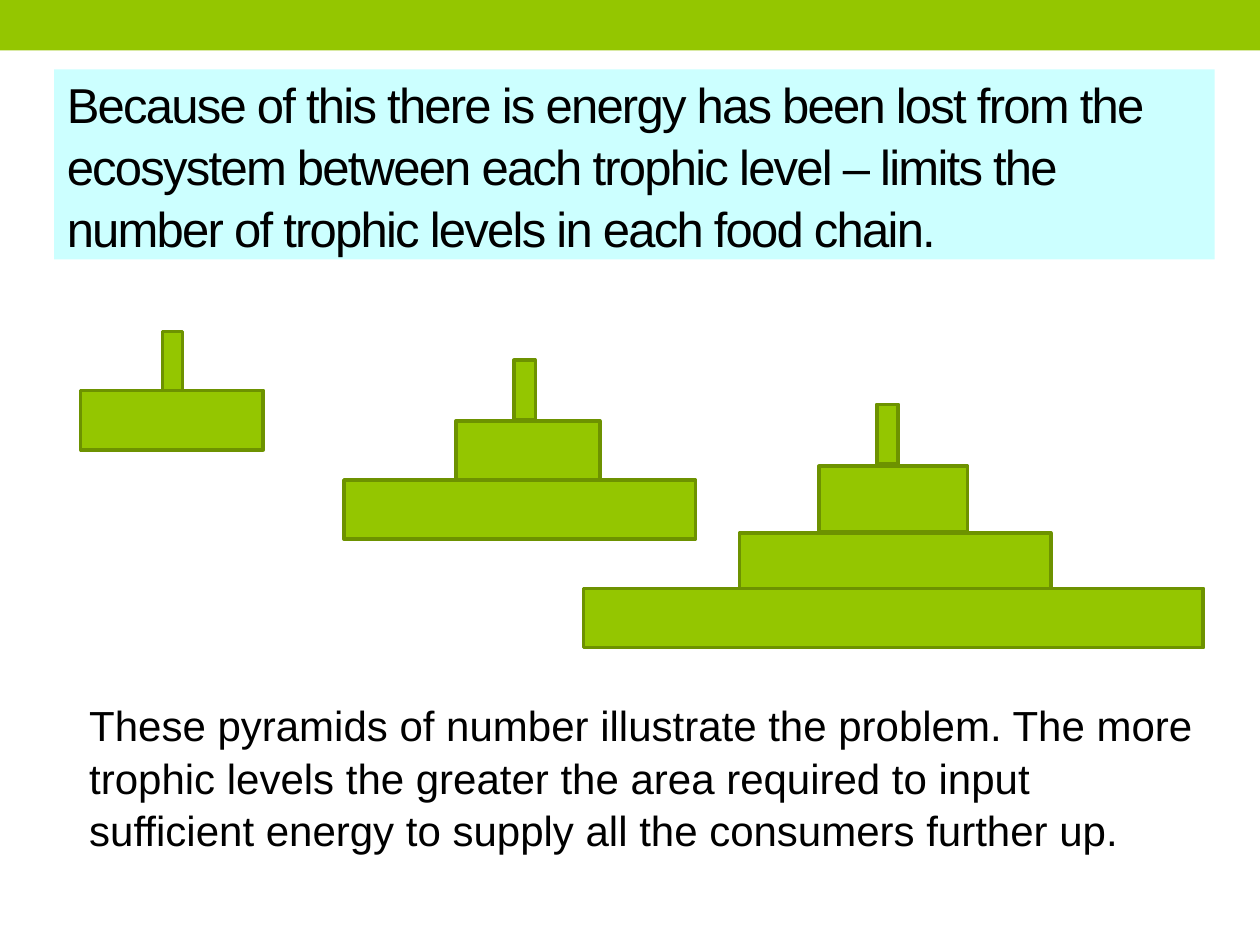
from pptx import Presentation
from pptx.dml.color import RGBColor
from pptx.enum.shapes import MSO_SHAPE
from pptx.enum.text import MSO_ANCHOR, MSO_AUTO_SIZE, PP_ALIGN
from pptx.util import Inches, Pt

GREEN, DARK_GREEN, PALE_BLUE, BLACK = "94C600", "6D9200", "CCFFFF", "000000"
TIER_HEIGHT = 0.47

TITLE = ("Because of this there is energy has been lost from the ecosystem between "
         "each trophic level – limits the number of trophic levels in each food chain.")
EXPLANATION = ("These pyramids of number illustrate the problem. The more trophic levels "
               "the greater the area required to input sufficient energy to supply all "
               "the consumers further up.")

# Each pyramid from its top consumer down: left, top, width and, if unusual, height
PYRAMIDS = [
    [(1.29, 2.63, 0.16), (0.64, 3.1, 1.45)],
    [(4.08, 2.86, 0.17), (3.62, 3.34, 1.14), (2.73, 3.81, 2.79)],
    [(6.96, 3.21, 0.17), (6.5, 3.7, 1.18, 0.52), (5.87, 4.23, 2.47), (4.63, 4.67, 4.92)],
]


def color(value):
    return RGBColor.from_string(value)


def add_bar(s, left, top, width, height=TIER_HEIGHT, line=None):
    box = [Inches(v) for v in (left, top, width, height)]
    bar = s.shapes.add_shape(MSO_SHAPE.RECTANGLE, *box)
    bar.shadow.inherit = False
    bar.fill.solid()
    bar.fill.fore_color.rgb = color(GREEN)
    if line:
        bar.line.color.rgb = color(line)
        bar.line.width = Pt(2.08)
    else:
        bar.line.fill.background()


def write(sp, text, size, anchor):
    """Fill a shape with one left-aligned Arial paragraph and return its run."""
    tf = sp.text_frame
    tf.text = text
    tf.word_wrap = True
    tf.auto_size = MSO_AUTO_SIZE.NONE
    tf.vertical_anchor = anchor
    p = tf.paragraphs[0]
    p.alignment = PP_ALIGN.LEFT
    p.line_spacing = 1.05
    r = p.runs[0]
    r.font.name = "Arial"
    r.font.size = Pt(size)
    r.font.color.rgb = color(BLACK)
    return r


def set_title(s):
    sp = s.shapes.title
    sp.left, sp.top, sp.width, sp.height = (Inches(v) for v in (0.43, 0.55, 9.21, 1.51))
    sp.fill.solid()
    sp.fill.fore_color.rgb = color(PALE_BLUE)
    r = write(sp, TITLE, 28, MSO_ANCHOR.MIDDLE)
    r.font._element.set("spc", "-100")  # letters 1 pt closer


def add_explanation(s):
    sp = s.shapes.add_textbox(*(Inches(v) for v in (0.61, 5.48, 9.04, 1.72)))
    write(sp, EXPLANATION, 24, MSO_ANCHOR.TOP)


def main():
    prs = Presentation()
    prs.slide_width, prs.slide_height = Inches(10), Inches(7.5)
    s = prs.slides.add_slide(prs.slide_layouts[5])
    add_bar(s, 0, 0, 10, 0.4)
    set_title(s)
    for pyramid in PYRAMIDS:
        for tier in pyramid:
            add_bar(s, *tier, line=DARK_GREEN)
    add_explanation(s)
    prs.save("out.pptx")


if __name__ == "__main__":
    main()
